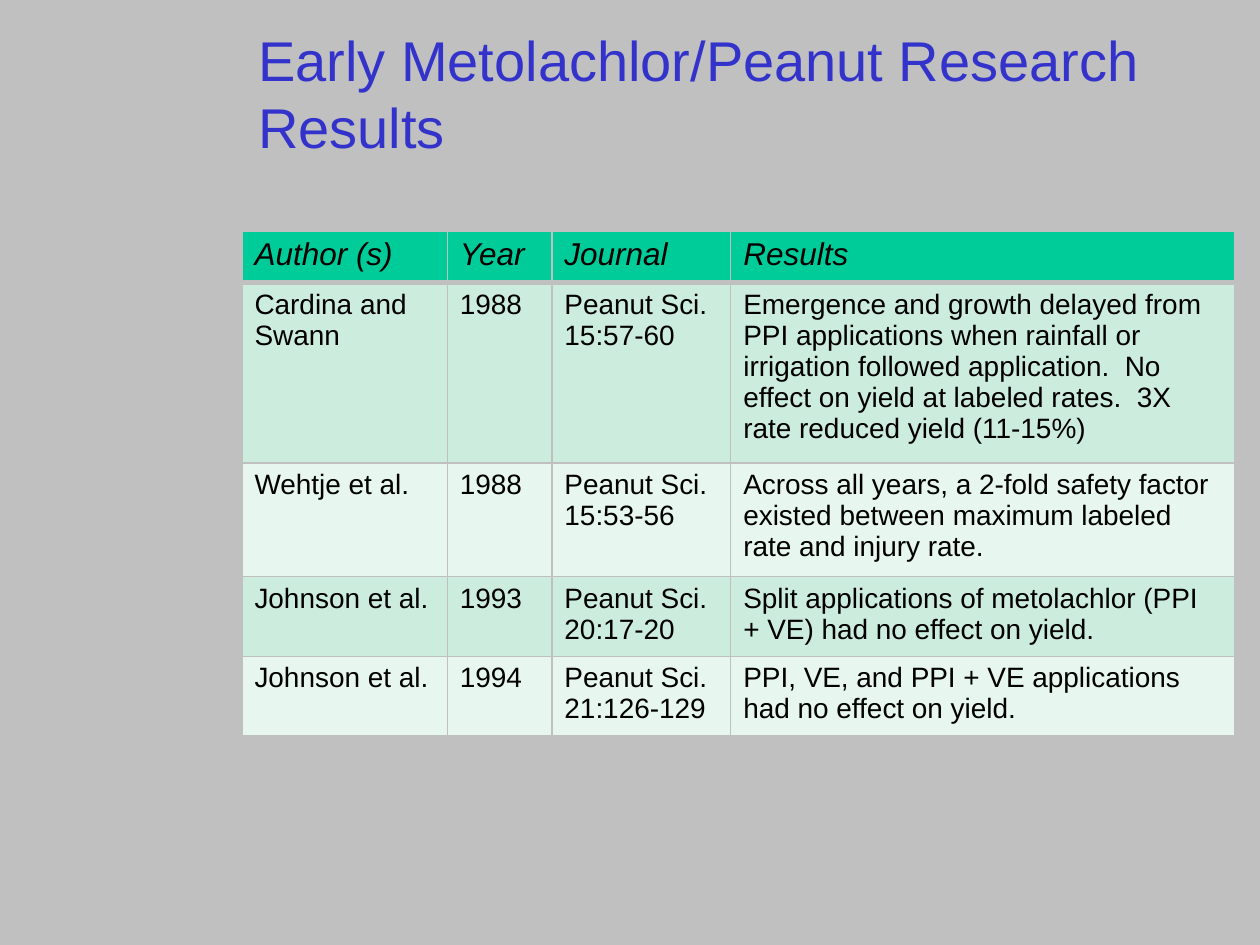
from dataclasses import dataclass

from lxml.etree import SubElement
from pptx import Presentation
from pptx.dml.color import RGBColor
from pptx.enum.text import MSO_ANCHOR
from pptx.oxml.ns import qn
from pptx.util import Pt


@dataclass(frozen=True)
class Theme:
    font: str = "Arial"
    background: str = "C0C0C0"
    title: str = "3333CC"
    text: str = "000000"
    header: str = "00CC99"
    bands: tuple = ("CCECDE", "E7F6EF")
    title_size: int = 32
    header_size: int = 18
    body_size: int = 16
    thin: int = 1
    thick: int = 3


THEME = Theme()
TITLE = "Early Metolachlor/Peanut Research Results"
COLUMN_WIDTHS = (117.36, 59.76, 102.24, 288)
ROW_HEIGHT = 29.5
ROWS = (
    ("Author (s)", "Year", "Journal", "Results"),
    (
        "Cardina and Swann",
        "1988",
        "Peanut Sci.\n15:57-60",
        "Emergence and growth delayed from PPI applications when rainfall or "
        "irrigation followed application.  No effect on yield at labeled rates.  "
        "3X rate reduced yield (11-15%)",
    ),
    (
        "Wehtje et al.",
        "1988",
        "Peanut Sci.\n15:53-56",
        "Across all years, a 2-fold safety factor existed between maximum "
        "labeled rate and injury rate.",
    ),
    (
        "Johnson et al.",
        "1993",
        "Peanut Sci.\n20:17-20",
        "Split applications of metolachlor (PPI + VE) had no effect on yield.",
    ),
    (
        "Johnson et al.",
        "1994",
        "Peanut Sci.\n21:126-129",
        "PPI, VE, and PPI + VE applications had no effect on yield.",
    ),
)


def style_text(text_frame, size, color, italic=False):
    for paragraph in text_frame.paragraphs:
        for run in paragraph.runs:
            run.font.name = THEME.font
            run.font.size = Pt(size)
            run.font.italic = italic
            run.font.color.rgb = RGBColor.from_string(color)


def add_title(slide, left, top, width, height):
    shape = slide.shapes.add_textbox(Pt(left), Pt(top), Pt(width), Pt(height))
    text_frame = shape.text_frame
    text_frame.word_wrap = True
    text_frame.vertical_anchor = MSO_ANCHOR.MIDDLE
    text_frame.text = TITLE
    style_text(text_frame, THEME.title_size, THEME.title)


def set_borders(cell, top, bottom):
    properties = cell._tc.get_or_add_tcPr()
    widths = {"lnL": THEME.thin, "lnR": THEME.thin, "lnT": top, "lnB": bottom}
    for side, width in widths.items():
        line = SubElement(properties, qn(f"a:{side}"), w=str(Pt(width)))
        fill = SubElement(line, qn("a:solidFill"))
        SubElement(fill, qn("a:srgbClr"), val=THEME.background)


def fill_cell(cell, text, row_index):
    is_header = row_index == 0
    set_borders(
        cell,
        top=THEME.thick if row_index == 1 else THEME.thin,
        bottom=THEME.thick if is_header else THEME.thin,
    )
    color = THEME.header if is_header else THEME.bands[(row_index - 1) % 2]
    cell.fill.solid()
    cell.fill.fore_color.rgb = RGBColor.from_string(color)
    cell.text_frame.text = text
    size = THEME.header_size if is_header else THEME.body_size
    style_text(cell.text_frame, size, THEME.text, italic=is_header)


def add_results_table(slide, left, top, width, height):
    frame = slide.shapes.add_table(
        len(ROWS), len(COLUMN_WIDTHS), Pt(left), Pt(top), Pt(width), Pt(height)
    )
    table = frame.table
    for column, share in zip(table.columns, COLUMN_WIDTHS):
        column.width = Pt(width * share / sum(COLUMN_WIDTHS))
    for row_index, (row, texts) in enumerate(zip(table.rows, ROWS)):
        row.height = Pt(ROW_HEIGHT)
        for cell, text in zip(row.cells, texts):
            fill_cell(cell, text, row_index)
    frame.height = Pt(height)


def main():
    presentation = Presentation()
    presentation.slide_width = Pt(720)
    presentation.slide_height = Pt(540)
    slide = presentation.slides.add_slide(presentation.slide_layouts[6])
    slide.background.fill.solid()
    slide.background.fill.fore_color.rgb = RGBColor.from_string(THEME.background)
    add_title(slide, 140.4, 8, 574, 90)
    add_results_table(slide, 138.24, 132, 567.36, 288.72)
    presentation.save("out.pptx")


if __name__ == "__main__":
    main()
